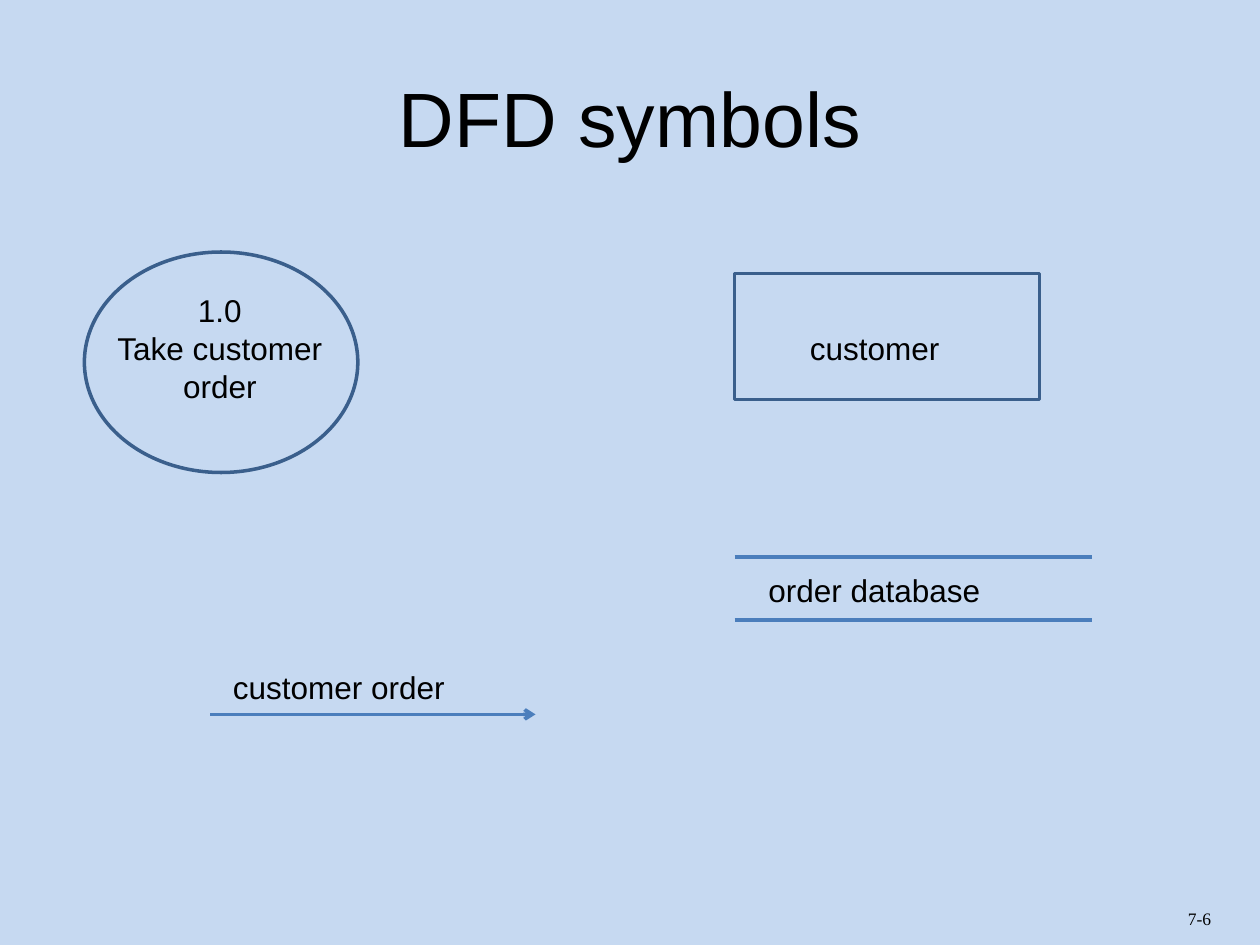
from lxml import etree
from pptx import Presentation
from pptx.dml.color import RGBColor
from pptx.enum import shapes, text
from pptx.oxml.ns import qn
from pptx.util import Inches, Pt

COLORS = {"background": "C6D9F1", "outline": "3A5F8C", "flow": "4B7EBC", "text": "000000"}

# Boxes are left, top, width, height in inches
SYMBOLS = [
    (shapes.MSO_SHAPE.OVAL, (0.67, 2, 2.17, 1.75)),  # process
    (shapes.MSO_SHAPE.RECTANGLE, (5.83, 2.17, 2.42, 1)),  # external entity
]
# Left, right, y, arrowhead
LINES = [
    (1.67, 4.25, 5.67, True),  # data flow
    (5.83, 8.67, 4.42, False),  # data store, top
    (5.83, 8.67, 4.92, False),  # data store, bottom
]
LABELS = [
    ("7-6", (9.33, 7.16, 0.67, 0.27), {"size": 10, "font": "Times New Roman"}),
    ("DFD symbols", (0.5, 0.3, 9, 1.25), {"size": 44, "centered": True, "middle": True}),
    ("customer order", (1.75, 5.25, 2, 0.4), {}),
    ("1.0\nTake customer order", (0.69, 2.26, 2.11, 1.01), {"centered": True}),
    ("customer", (6.33, 2.56, 1.58, 0.4), {}),
    ("order database", (6, 4.48, 2.67, 0.4), {}),
]


def rgb(name):
    return RGBColor.from_string(COLORS[name])


def add_symbol(slide, kind, box):
    sp = slide.shapes.add_shape(kind, *map(Inches, box))
    sp.shadow.inherit = False
    sp.fill.background()
    sp.line.color.rgb = rgb("outline")
    sp.line.width = Pt(2)


def add_line(slide, left, right, y, arrow):
    line = slide.shapes.add_connector(
        shapes.MSO_CONNECTOR.STRAIGHT, Inches(left), Inches(y), Inches(right), Inches(y))
    line.line.color.rgb = rgb("flow")
    line.line.width = Pt(2)
    if arrow:
        etree.SubElement(line.line._get_or_add_ln(), qn("a:tailEnd"), type="arrow")
    etree.SubElement(line._element.spPr, qn("a:effectLst"))


def add_label(slide, words, box, size=18, font="Arial", centered=False, middle=False):
    tf = slide.shapes.add_textbox(*map(Inches, box)).text_frame
    tf.word_wrap = True
    tf.vertical_anchor = text.MSO_ANCHOR.MIDDLE if middle else text.MSO_ANCHOR.TOP
    tf.text = words
    for p in tf.paragraphs:
        p.alignment = text.PP_ALIGN.CENTER if centered else text.PP_ALIGN.LEFT
        for r in p.runs:
            r.font.name = font
            r.font.size = Pt(size)
            r.font.color.rgb = rgb("text")


def main():
    prs = Presentation()
    prs.slide_width, prs.slide_height = Inches(10), Inches(7.5)
    slide = prs.slides.add_slide(prs.slide_layouts[6])
    slide.background.fill.solid()
    slide.background.fill.fore_color.rgb = rgb("background")
    for kind, box in SYMBOLS:
        add_symbol(slide, kind, box)
    for line in LINES:
        add_line(slide, *line)
    for words, box, style in LABELS:
        add_label(slide, words, box, **style)
    prs.save("out.pptx")


if __name__ == "__main__":
    main()
